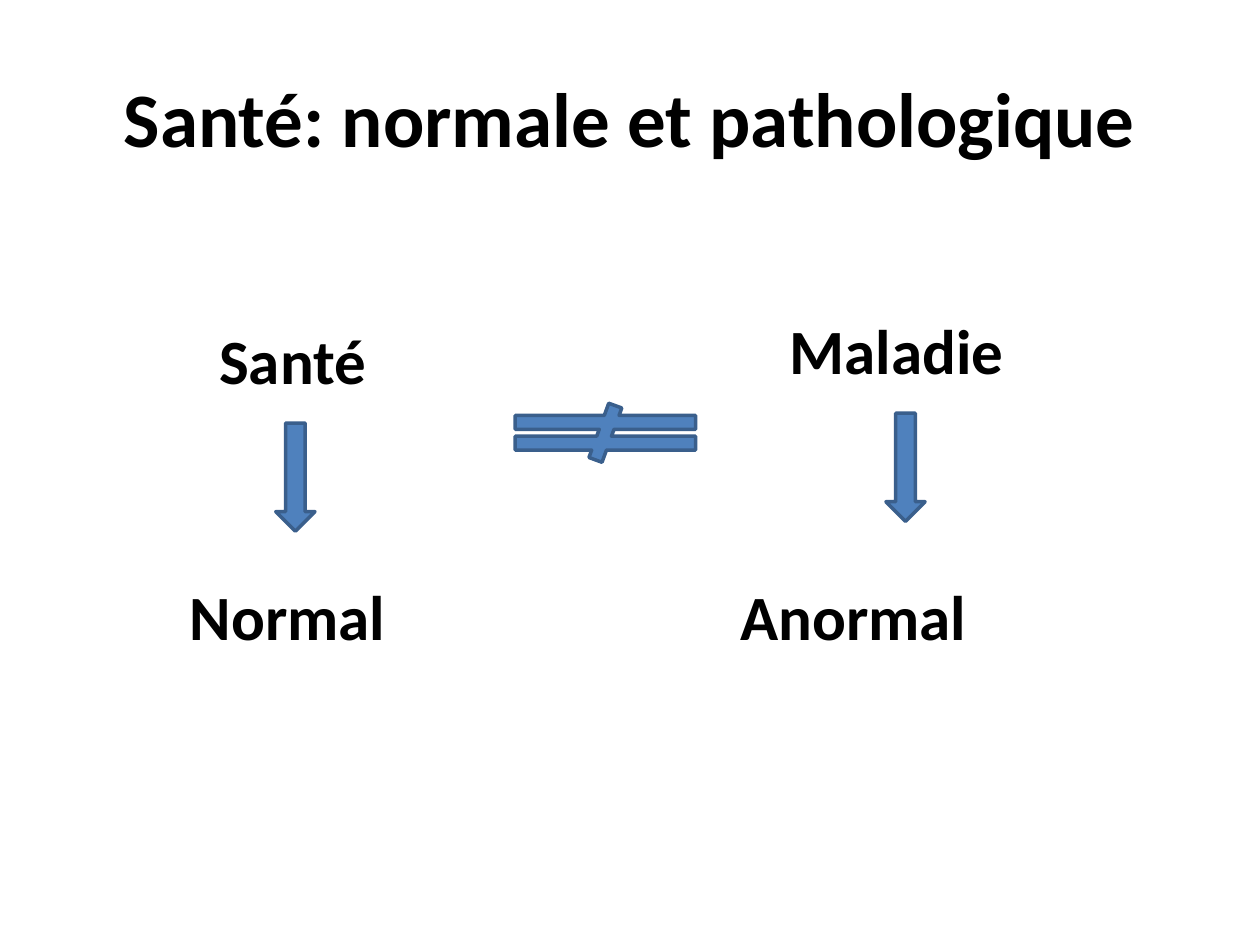
from dataclasses import dataclass

from pptx import Presentation
from pptx.dml.color import RGBColor
from pptx.enum.shapes import MSO_SHAPE
from pptx.enum.text import MSO_ANCHOR, PP_ALIGN
from pptx.util import Cm, Pt

DOWN = MSO_SHAPE.DOWN_ARROW
UNLIKE = MSO_SHAPE.MATH_NOT_EQUAL
TOP, MIDDLE = MSO_ANCHOR.TOP, MSO_ANCHOR.MIDDLE
LEFT, CENTER = PP_ALIGN.LEFT, PP_ALIGN.CENTER


@dataclass(frozen=True)
class Theme:
    font: str = "Calibri"
    ink: RGBColor = RGBColor(0, 0, 0)
    fill: RGBColor = RGBColor(0x4F, 0x81, 0xBD)
    edge: RGBColor = RGBColor(0x3A, 0x5F, 0x8C)
    title: int = 44
    label: int = 36
    line: int = 2


THEME = Theme()


def add_text(slide, box, text, size, align=LEFT, anchor=TOP):
    frame = slide.shapes.add_textbox(*map(Cm, box)).text_frame
    frame.word_wrap = True
    frame.vertical_anchor = anchor
    frame.text = text
    para = frame.paragraphs[0]
    para.alignment = align
    font = para.runs[0].font
    font.name = THEME.font
    font.size = Pt(size)
    font.bold = True
    font.color.rgb = THEME.ink


def add_sign(slide, kind, box):
    sign = slide.shapes.add_shape(kind, *map(Cm, box))
    sign.shadow.inherit = False
    sign.fill.solid()
    sign.fill.fore_color.rgb = THEME.fill
    sign.line.color.rgb = THEME.edge
    sign.line.width = Pt(THEME.line)


def add_title(slide, box):
    add_text(slide, box, "Santé: normale et pathologique", THEME.title, CENTER, MIDDLE)


def add_column(slide, box, state, norm, indent, shift):
    left, top, width, height = box
    row = 1.8
    add_text(slide, (left + indent, top, width - indent, row), state, THEME.label)
    add_sign(slide, DOWN, (left + shift, top + 2.18, 0.79, 2.18))
    add_text(slide, (left, top + height - row, width, row), norm, THEME.label)


def main():
    deck = Presentation()
    deck.slide_width, deck.slide_height = Cm(25.4), Cm(19.05)
    slide = deck.slides.add_slide(deck.slide_layouts[6])
    add_title(slide, (1.27, 0.76, 22.86, 3.18))
    add_column(slide, (3.58, 6.35, 7.34, 6.96), "Santé", "Normal", 0.59, 1.98)
    add_column(slide, (14.68, 6.15, 7.54, 7.16), "Maladie", "Anormal", 0.99, 3.18)
    add_sign(slide, UNLIKE, (9.73, 8.13, 4.95, 1.19))
    deck.save("out.pptx")


if __name__ == "__main__":
    main()
